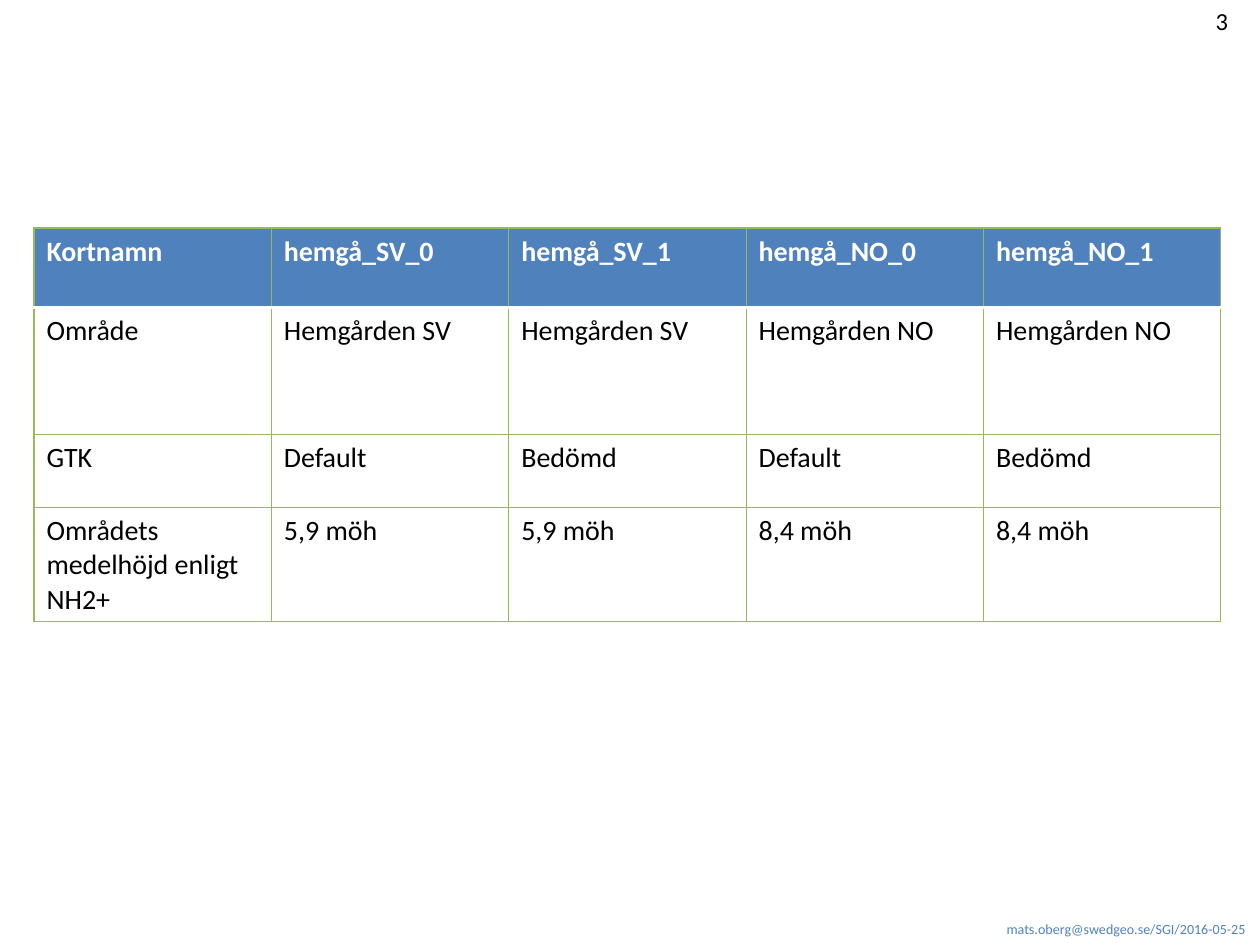
from pptx import Presentation
from pptx.util import Inches, Pt
from pptx.dml.color import RGBColor
from pptx.enum.text import MSO_AUTO_SIZE as AUTO
from pptx.oxml.ns import qn
from lxml.etree import SubElement

ROWS = [
    ("Kortnamn", "hemgå_SV_0", "hemgå_SV_1", "hemgå_NO_0", "hemgå_NO_1"),
    ("Område", "Hemgården SV", "Hemgården SV", "Hemgården NO", "Hemgården NO"),
    ("GTK", "Default", "Bedömd", "Default", "Bedömd"),
    ("Områdets medelhöjd enligt NH2+", "5,9 möh", "5,9 möh", "8,4 möh", "8,4 möh"),
]
HEIGHTS = [0.63, 1.01, 0.58, 0.9]
LEFT, TOP, WIDTH = 0.27, 1.81, 9.42
FOOTER = "mats.oberg@swedgeo.se/SGI/2016-05-25"
PAGE = "3"
BLUE, GREEN, WHITE, BLACK = "4F81BD", "98B955", "FFFFFF", "000000"


def rgb(value):
    return RGBColor.from_string(value)


def write(tf, text, size, color, bold=False):
    r = tf.paragraphs[0].add_run()
    r.text = text
    r.font.name = "Calibri"
    r.font.size = Pt(size)
    r.font.bold = bold
    r.font.color.rgb = rgb(color)


def add_text(s, box, text, size, color, wrap=True):
    tf = s.shapes.add_textbox(*map(Inches, box)).text_frame
    tf.word_wrap = wrap
    tf.auto_size = AUTO.NONE if wrap else AUTO.SHAPE_TO_FIT_TEXT
    write(tf, text, size, color)


def add_border(cell, side, color, width):
    ln = SubElement(cell._tc.get_or_add_tcPr(), qn(f"a:ln{side}"), w=str(Pt(width)))
    SubElement(SubElement(ln, qn("a:solidFill")), qn("a:srgbClr"), val=color)


def add_grid(s):
    box = map(Inches, (LEFT, TOP, WIDTH, sum(HEIGHTS)))
    table = s.shapes.add_table(len(ROWS), len(ROWS[0]), *box).table
    table.horz_banding = False
    for row, height in zip(table.rows, HEIGHTS):
        row.height = Inches(height)
    for i, values in enumerate(ROWS):
        header = i == 0
        for j, text in enumerate(values):
            cell = table.cell(i, j)
            for side in "LRTB":
                divider = (side == "B" and i == 0) or (side == "T" and i == 1)
                add_border(cell, side, *((WHITE, 2) if divider else (GREEN, 0.75)))
            cell.fill.solid()
            cell.fill.fore_color.rgb = rgb(BLUE if header else WHITE)
            write(cell.text_frame, text, 16, WHITE if header else BLACK, header)


def main():
    prs = Presentation()
    prs.slide_width, prs.slide_height = Inches(10), Inches(7.5)
    s = prs.slides.add_slide(prs.slide_layouts[6])
    add_text(s, (7.89, 7.26, 2.17, 0.24), FOOTER, 8, BLUE, wrap=False)
    add_text(s, (9.55, 0, 0.45, 0.4), PAGE, 14, BLACK)
    add_grid(s)
    prs.save("out.pptx")


if __name__ == "__main__":
    main()
